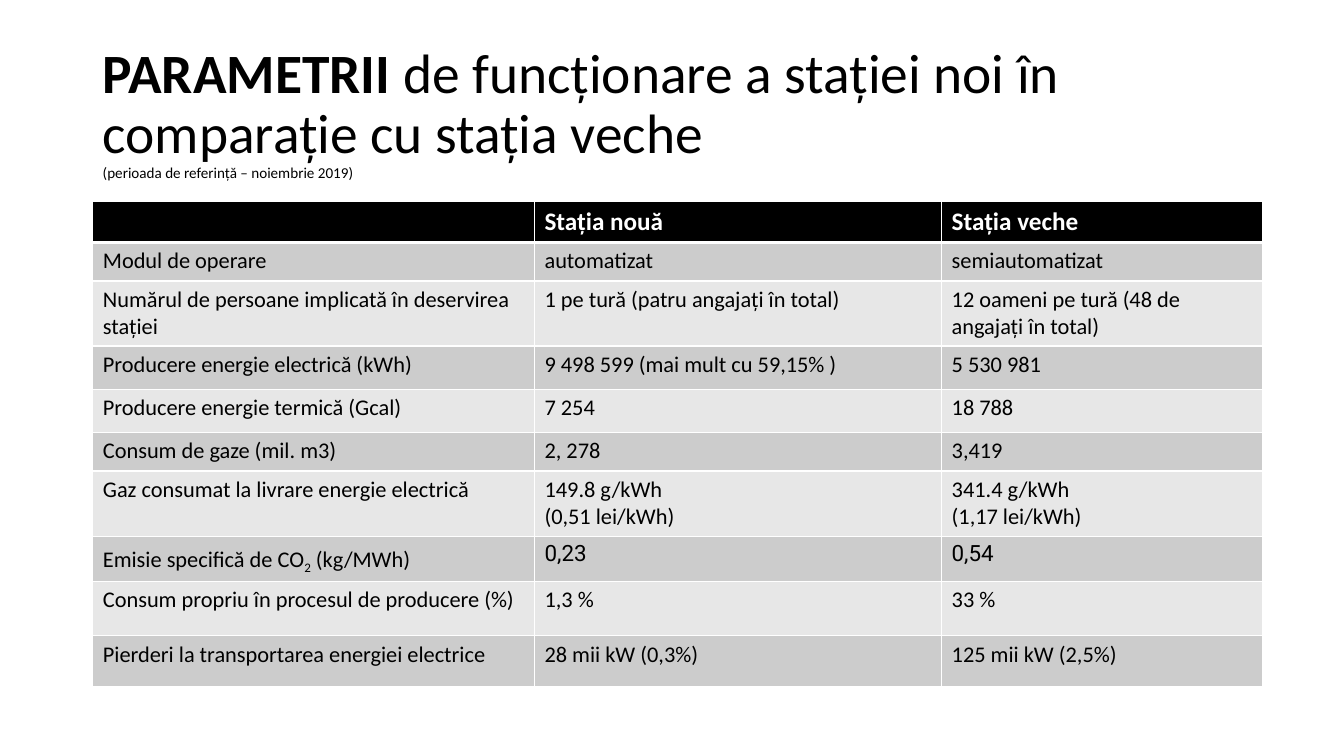
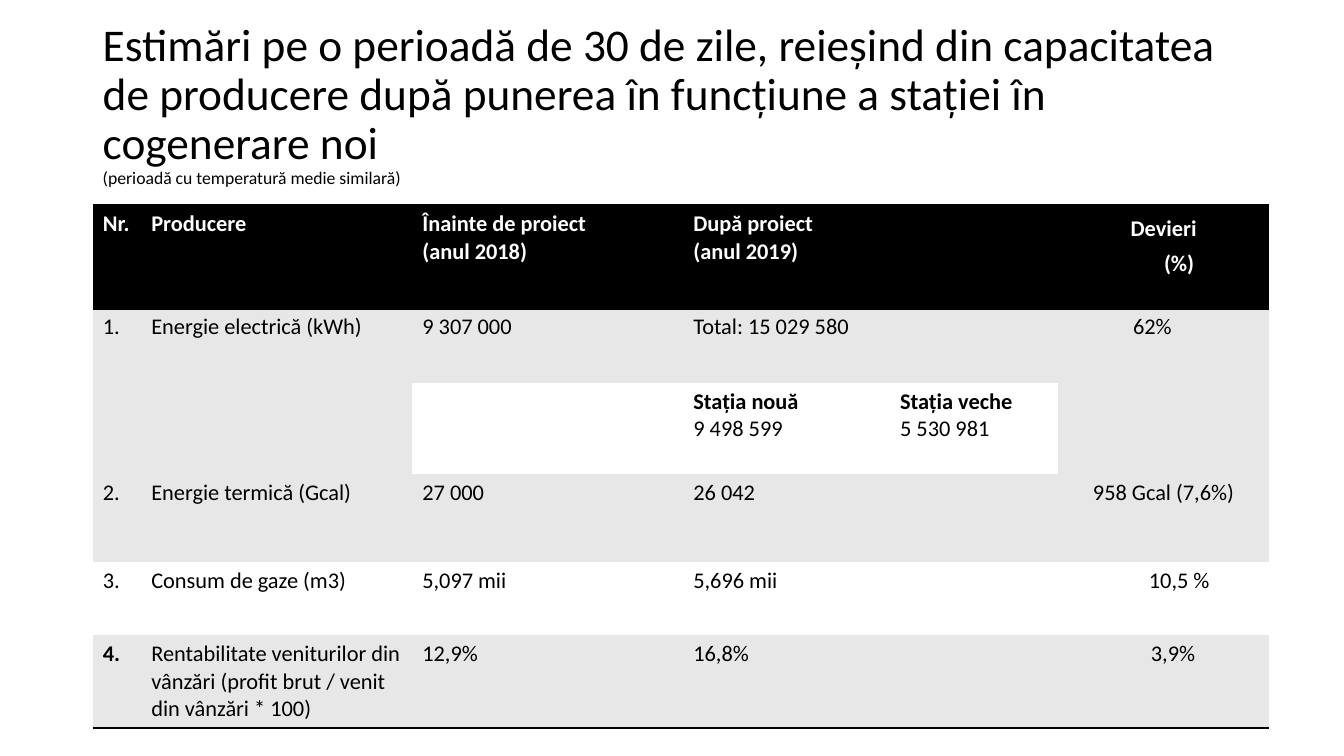
from dataclasses import dataclass, field

import pptx
import pptx.dml.color
import pptx.enum.text
import pptx.oxml
import pptx.oxml.ns
import pptx.util

Cm = pptx.util.Cm
Pt = pptx.util.Pt
ALIGN = pptx.enum.text.PP_ALIGN


# Theme
@dataclass(frozen=True)
class Theme:
    black: str = "000000"
    white: str = "FFFFFF"
    dark_band: str = "CCCCCC"
    light_band: str = "E7E7E7"
    font: str = "Calibri"
    number_font: str = "Roboto"
    body_size: float = 16
    header_size: float = 18
    title_spacing: float = 0.9
    loose_spacing: float = 1.15
    plain_table_style: str = "{2D5ABB26-0587-4C30-8999-92F81FD0307C}"


THEME = Theme()
LEFT = 2.34
TITLE_WIDTH = 29.21


# Slide content types
@dataclass(frozen=True)
class Span:
    text: str
    bold: bool | None = None
    size: float | None = None
    subscript: bool = False


@dataclass(frozen=True)
class Para:
    spans: tuple[Span, ...]
    font: str = THEME.font
    bold: bool | None = None
    indent: float = 0
    align: ALIGN | None = None
    spacing: float | None = None
    after: float | None = None


@dataclass(frozen=True)
class Edge:
    colour: str
    width: float


Cell = str | tuple[Para, ...]


@dataclass(frozen=True)
class Row:
    height: float
    fill: str
    cells: tuple[Cell, ...]
    colour: str = THEME.black
    size: float = THEME.body_size
    bold: bool = False
    edges: dict[str, Edge] = field(default_factory=dict)


@dataclass(frozen=True)
class Title:
    spans: tuple[Span, ...]
    note: Span
    size: float
    top: float
    height: float


@dataclass(frozen=True)
class Grid:
    top: float
    columns: tuple[float, ...]
    rows: tuple[Row, ...]
    merges: tuple[tuple[int, int, int, int], ...] = ()


def line(text: str, **options) -> Para:
    return Para((Span(text),), **options)


# Drawing
def style_font(font, name: str, size: float, colour: str, bold: bool) -> None:
    font.name = name
    font.size = Pt(size)
    font.bold = bold
    font.color.rgb = pptx.dml.color.RGBColor.from_string(colour)


def add_span(paragraph, content: Span) -> None:
    span = paragraph.add_run()
    span.text = content.text
    if content.bold is not None:
        span.font.bold = content.bold
    if content.size is not None:
        span.font.size = Pt(content.size)
    if content.subscript:
        span._r.get_or_add_rPr().set("baseline", "-25000")


def draw_title(page, title: Title) -> None:
    box = page.shapes.add_textbox(Cm(LEFT), Cm(title.top), Cm(TITLE_WIDTH), Cm(title.height))
    frame = box.text_frame
    frame.word_wrap = True
    frame.vertical_anchor = pptx.enum.text.MSO_ANCHOR.MIDDLE
    paragraph = frame.paragraphs[0]
    paragraph.line_spacing = THEME.title_spacing
    style_font(paragraph.font, THEME.font, title.size, THEME.black, False)
    for content in title.spans:
        add_span(paragraph, content)
    paragraph.add_line_break()
    add_span(paragraph, title.note)


def draw_edges(cell, edges: dict[str, Edge]) -> None:
    properties = cell._tc.get_or_add_tcPr()
    for side in "LRTB":
        if side in edges:
            edge = edges[side]
            properties.append(pptx.oxml.parse_xml(
                f'<a:ln{side} {pptx.oxml.ns.nsdecls("a")} w="{Pt(edge.width)}">'
                f'<a:solidFill><a:srgbClr val="{edge.colour}"/></a:solidFill></a:ln{side}>'
            ))


def fill_cell(cell, content: Cell, row: Row) -> None:
    draw_edges(cell, row.edges)
    cell.fill.solid()
    cell.fill.fore_color.rgb = pptx.dml.color.RGBColor.from_string(row.fill)
    if not content:
        return
    paras = (line(content),) if isinstance(content, str) else content
    for index, para in enumerate(paras):
        frame = cell.text_frame
        paragraph = frame.add_paragraph() if index else frame.paragraphs[0]
        paragraph.alignment = para.align
        paragraph.line_spacing = para.spacing
        if para.after is not None:
            paragraph.space_after = Pt(para.after)
        if para.indent:
            paragraph._p.get_or_add_pPr().set("marL", str(Cm(para.indent)))
        bold = row.bold if para.bold is None else para.bold
        style_font(paragraph.font, para.font, row.size, row.colour, bold)
        for span in para.spans:
            add_span(paragraph, span)


def draw_grid(page, grid: Grid) -> None:
    table = page.shapes.add_table(
        len(grid.rows), len(grid.columns), Cm(LEFT), Cm(grid.top),
        Cm(sum(grid.columns)), Cm(sum(row.height for row in grid.rows)),
    ).table
    table.horz_banding = False
    style = table._tbl.tblPr.find(pptx.oxml.ns.qn("a:tableStyleId"))
    style.text = THEME.plain_table_style
    for column, width in zip(table.columns, grid.columns):
        column.width = Cm(width)
    for row_index, row in enumerate(grid.rows):
        table.rows[row_index].height = Cm(row.height)
        for column_index, content in enumerate(row.cells):
            fill_cell(table.cell(row_index, column_index), content, row)
    for top, left, bottom, right in grid.merges:
        table.cell(top, left).merge(table.cell(bottom, right))


# Slide 1: operating parameters
WHITE_EDGE = Edge(THEME.white, 1)
WHITE_EDGES = {"L": WHITE_EDGE, "R": WHITE_EDGE, "B": WHITE_EDGE}
EMISSION = (Para(
    (Span("Emisie specifică de CO"), Span("2", subscript=True), Span(" (kg/MWh)")),
    spacing=THEME.loose_spacing, after=6,
),)
PARAMETERS = (
    (0.97, ("Modul de operare", "automatizat", "semiautomatizat")),
    (1.64, ("Numărul de persoane implicată în deservirea stației",
            "1 pe tură (patru angajați în total)",
            "12 oameni pe tură (48 de angajați în total)")),
    (1.09, ("Producere energie electrică (kWh)", "9 498 599 (mai mult cu 59,15% )", "5 530 981")),
    (1.09, ("Producere energie termică (Gcal)", "7 254", "18 788")),
    (0.97, ("Consum de gaze (mil. m3)", "2, 278", "3,419")),
    (1.64, ("Gaz consumat la livrare energie electrică",
            (line("149.8 g/kWh"), line("(0,51 lei/kWh)")),
            (line("341.4 g/kWh"), line("(1,17 lei/kWh)")))),
    (1.14, (EMISSION, (line("0,23", font=THEME.number_font),),
            (line("0,54", font=THEME.number_font),))),
    (1.37, ("Consum propriu în procesul de producere (%)", "1,3 %", "33 %")),
    (1.27, ("Pierderi la transportarea energiei electrice", "28 mii kW (0,3%)",
            "125 mii kW (2,5%)")),
)
PARAMETER_TITLE = Title(
    (Span("PARAMETRII ", bold=True),
     Span("de funcționare a stației noi în comparație cu stația veche")),
    Span("(perioada de referință – noiembrie 2019)", size=10.8),
    size=39.6, top=1.02, height=3.68,
)
PARAMETER_HEADER = Row(
    1.03, THEME.black, ("", "Stația nouă", "Stația veche"),
    colour=THEME.white, size=THEME.header_size, bold=True,
    edges=WHITE_EDGES | {"T": WHITE_EDGE, "B": Edge(THEME.white, 3)},
)
PARAMETER_GRID = Grid(5.08, (11.13, 10.26, 8.1), (PARAMETER_HEADER,) + tuple(
    Row(height, THEME.light_band if index % 2 else THEME.dark_band, cells, edges=WHITE_EDGES)
    for index, (height, cells) in enumerate(PARAMETERS)
))

# Slide 2: estimates for 30 days
BLACK_EDGE = Edge(THEME.black, 2)
ESTIMATE_TITLE = Title(
    (Span("Estimări pe o perioadă de 30 de zile, reieșind din capacitatea de producere "
          "după punerea în funcțiune a stației în cogenerare noi"),),
    Span("(perioadă cu temperatură medie similară)", size=12.6),
    size=32.4, top=0.61, height=4.09,
)
ESTIMATE_GRID = Grid(5.18, (1.22, 6.83, 6.83, 5.21, 4.24, 5.31), (
    Row(2.59, THEME.black, (
        "Nr.", "Producere",
        (line("Înainte de proiect"), line("(anul 2018)")),
        (line("După proiect"), line("(anul 2019)")), "",
        (line("Devieri", align=ALIGN.CENTER, spacing=THEME.loose_spacing, after=6),
         line("(%)", indent=2.41)),
    ), colour=THEME.white, bold=True, edges={"T": BLACK_EDGE, "B": BLACK_EDGE}),
    Row(1.88, THEME.light_band, (
        "1.", "Energie electrică (kWh)", "9 307 000", "Total: 15 029 580", "",
        (line("62%", indent=1.63),),
    )),
    Row(2.3, THEME.white, (
        "", "", "",
        (line("Stația nouă", bold=True), line("9 498 599")),
        (line("Stația veche", bold=True), line("5 530 981")), "",
    )),
    Row(2.21, THEME.light_band, (
        "2.", "Energie termică (Gcal)", "27 000", "26 042", "",
        (line("958 Gcal (7,6%)", indent=0.62),),
    )),
    Row(1.85, THEME.white, (
        "3.", "Consum de gaze (m3)", "5,097 mii", "5,696 mii", "",
        (line("10,5 %", indent=2.03),),
    )),
    Row(2.33, THEME.light_band, (
        (line("4.", bold=True),),
        "Rentabilitate veniturilor din vânzări (profit brut / venit din vânzări * 100)",
        "12,9%", "16,8%", "", (line("3,9%", indent=2.08),),
    ), edges={"B": BLACK_EDGE}),
), merges=tuple((1, column, 2, column) for column in (0, 1, 5))
    + tuple((row, 3, row, 4) for row in (0, 3, 4, 5)))


def main() -> None:
    deck = pptx.Presentation()
    deck.slide_width, deck.slide_height = Cm(33.87), Cm(19.05)
    for title, grid in ((PARAMETER_TITLE, PARAMETER_GRID), (ESTIMATE_TITLE, ESTIMATE_GRID)):
        page = deck.slides.add_slide(deck.slide_layouts[6])
        draw_title(page, title)
        draw_grid(page, grid)
    deck.save("out.pptx")


if __name__ == "__main__":
    main()
